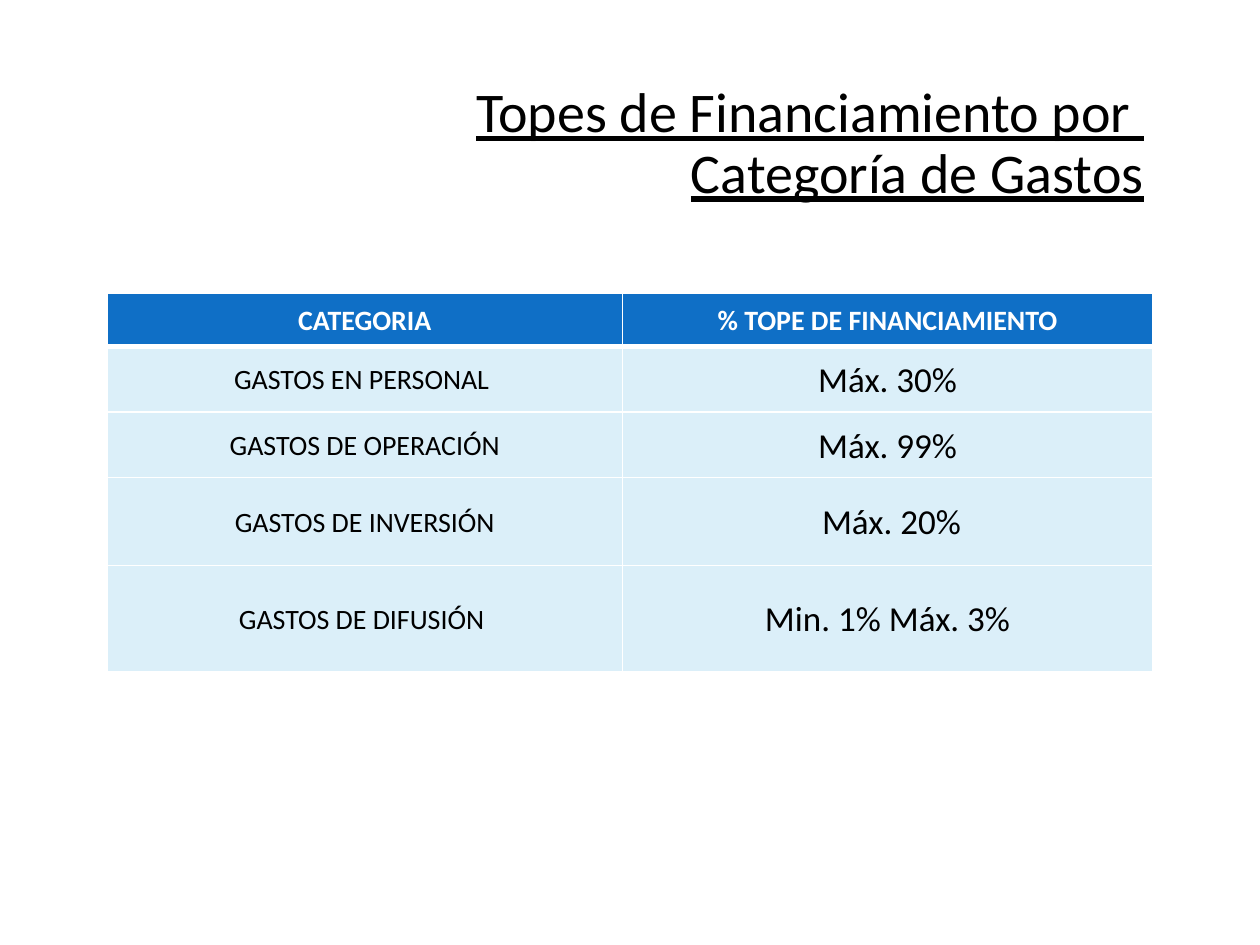
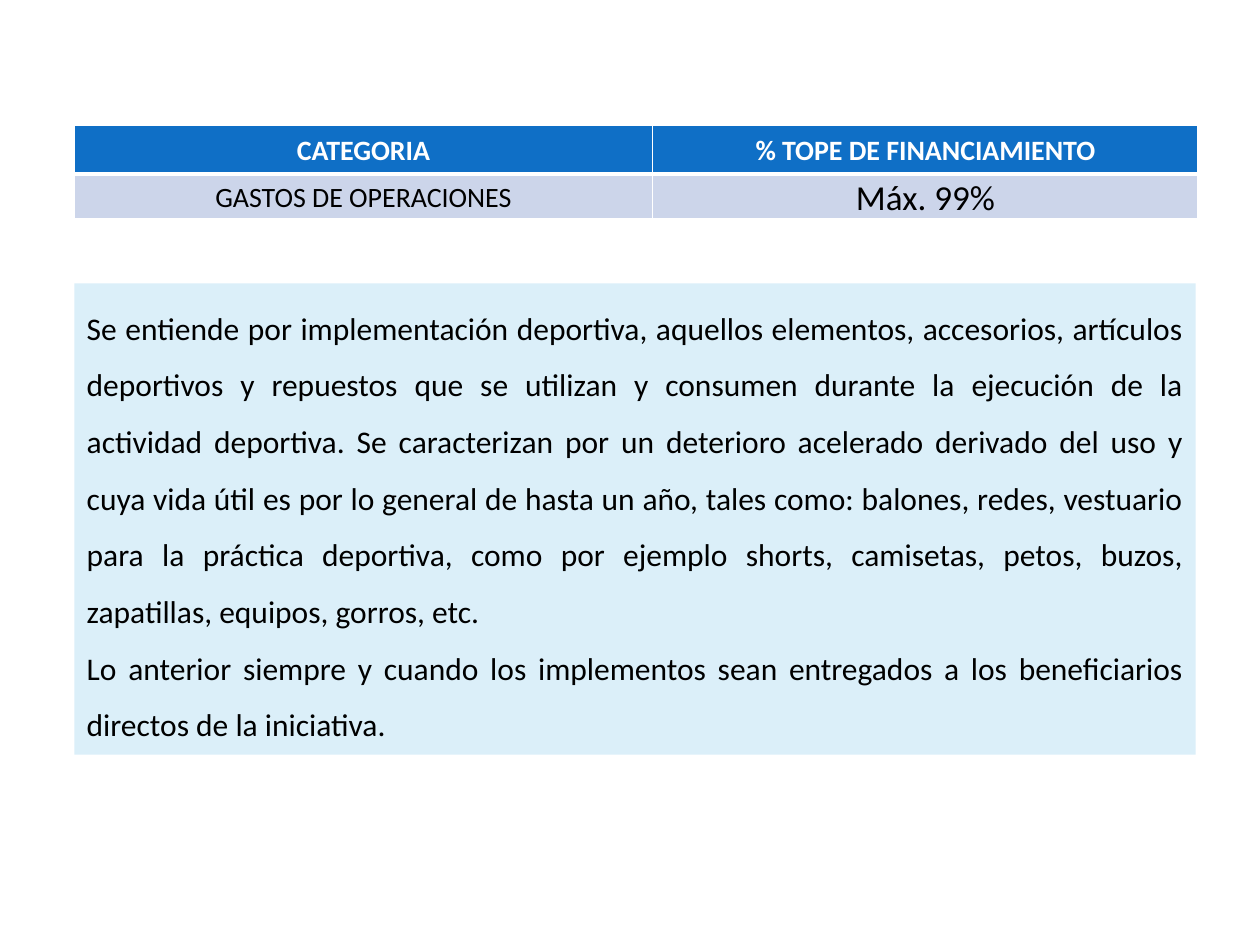
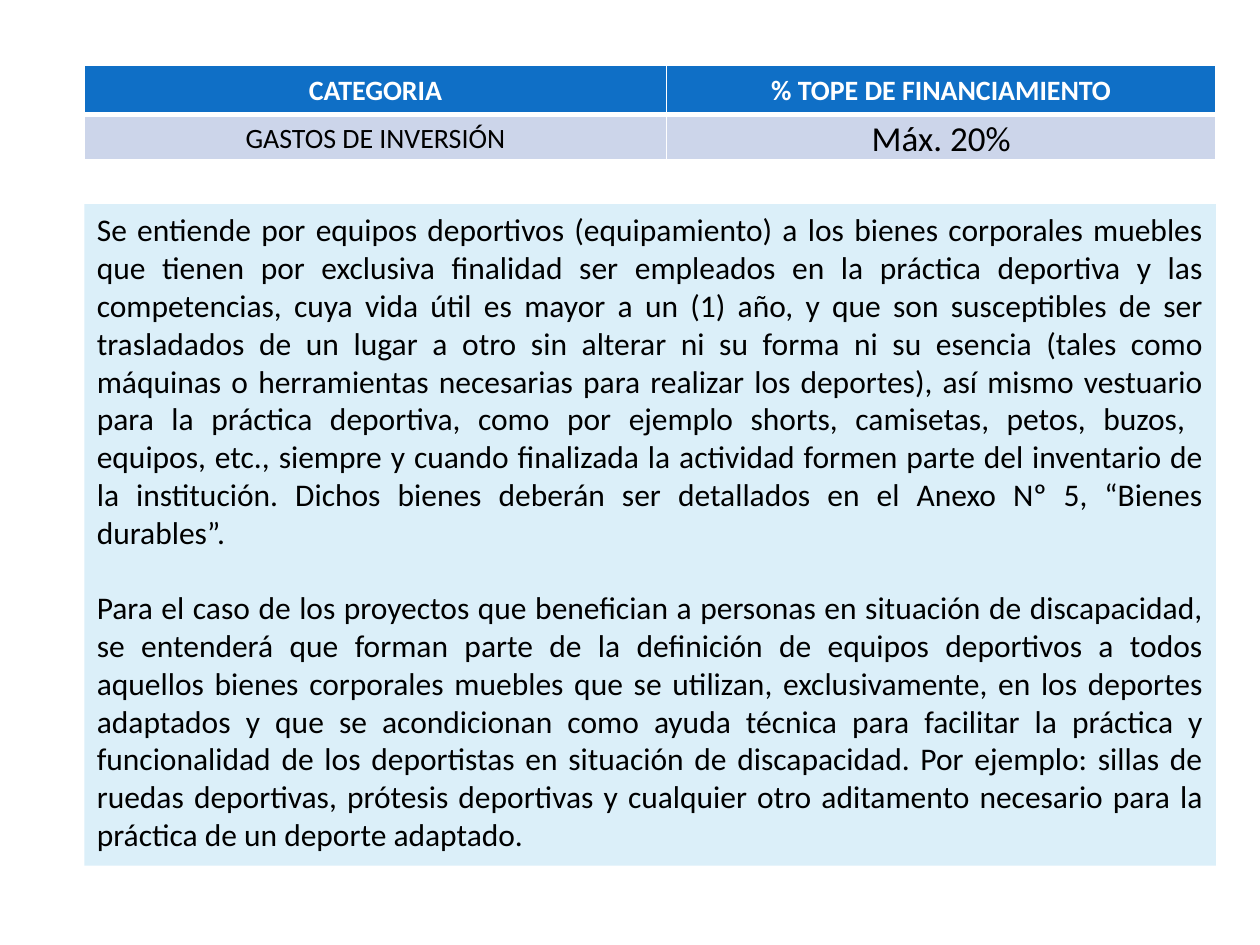
from lxml import etree
from pptx import Presentation
from pptx.dml.color import RGBColor
from pptx.enum import shapes, text
from pptx.oxml import ns
from pptx.util import Inches, Pt

# Style
WHITE = RGBColor(0xFF, 0xFF, 0xFF)
BLACK = RGBColor(0, 0, 0)
BLUE = RGBColor(0x0F, 0x6F, 0xC6)
PALE = RGBColor(0xDB, 0xEF, 0xF9)
LILAC = RGBColor(0xCC, 0xD5, 0xEA)
FONT = "Calibri"
TITLE_ONLY, BLANK = 5, 6
HEAD = ("CATEGORIA", "% TOPE DE FINANCIAMIENTO")
ALIGN, ANCHOR = text.PP_ALIGN, text.MSO_ANCHOR


def apply(item, values):
    for name, value in values.items():
        setattr(item, name, value)


class Deck:
    def __init__(self):
        self.prs = Presentation()
        self.prs.slide_width, self.prs.slide_height = Inches(10), Inches(7.5)
        self.slide = None

    def add(self, layout):
        self.slide = self.prs.slides.add_slide(self.prs.slide_layouts[layout])

    def label(self, para, words, size, color=BLACK, form=None, **font):
        apply(para, form or {})
        para.text = words
        for run in para.runs:
            apply(run.font, {"name": FONT, "size": Pt(size), **font})
            run.font.color.rgb = color

    def title(self, words, box):
        shape = self.slide.shapes.title
        apply(shape, dict(zip(("left", "top", "width", "height"), map(Inches, box))))
        apply(shape.text_frame, {"auto_size": text.MSO_AUTO_SIZE.NONE,
                                 "vertical_anchor": ANCHOR.MIDDLE})
        self.label(shape.text_frame.paragraphs[0], words, 32, underline=True,
                   form={"alignment": ALIGN.RIGHT, "line_spacing": 0.9})

    def edge(self, cell, side, width):
        props = cell._tc.get_or_add_tcPr()
        line = etree.SubElement(props, ns.qn(f"a:ln{side}"), w=str(Pt(width)))
        fill = etree.SubElement(line, ns.qn("a:solidFill"))
        etree.SubElement(fill, ns.qn("a:srgbClr"), val=str(WHITE))

    def cell(self, cell, words, size, color, fill, tops, bold):
        apply(cell, {"margin_left": Inches(0.02), "margin_right": Inches(0.02),
                     "margin_top": 0, "margin_bottom": 0,
                     "vertical_anchor": ANCHOR.MIDDLE})
        for side, width in zip("LRTB", (1, 1, *tops)):
            self.edge(cell, side, width)
        cell.fill.solid()
        cell.fill.fore_color.rgb = fill
        self.label(cell.text_frame.paragraphs[0], words, size, color, bold=bold,
                   form={"alignment": ALIGN.CENTER, "line_spacing": 1.07})

    def table(self, left, top, cols, highs, rows, fill):
        rows = [HEAD, *rows]
        grid = self.slide.shapes.add_table(
            len(rows), len(cols), Inches(left), Inches(top),
            Inches(sum(cols)), Inches(sum(highs))).table
        for col, width in zip(grid.columns, cols):
            col.width = Inches(width)
        for r, (row, high) in enumerate(zip(rows, highs)):
            grid.rows[r].height = Inches(high)
            for c, words in enumerate(row):
                if r == 0:
                    look = (16, WHITE, BLUE, (1, 3), True)
                else:
                    look = ((16, 20)[c], BLACK, fill, (3 if r == 1 else 1, 1), False)
                self.cell(grid.cell(r, c), words, *look)

    def panel(self, box, paras, spacing=1, gap=0):
        shape = self.slide.shapes.add_shape(
            shapes.MSO_SHAPE.RECTANGLE, *map(Inches, box))
        shape.shadow.inherit = False
        shape.fill.solid()
        shape.fill.fore_color.rgb = PALE
        shape.line.fill.background()
        frame = shape.text_frame
        apply(frame, {"word_wrap": True, "vertical_anchor": ANCHOR.TOP,
                      "auto_size": text.MSO_AUTO_SIZE.SHAPE_TO_FIT_TEXT})
        for i, words in enumerate(paras):
            para = frame.add_paragraph() if i else frame.paragraphs[0]
            self.label(para, words, 18, form={
                "alignment": ALIGN.JUSTIFY, "line_spacing": spacing,
                "space_before": Pt(gap if i else 0)})

    def topic(self, left, top, cols, row, box, paras, **form):
        self.add(BLANK)
        self.panel(box, paras, **form)
        self.table(left, top, cols, (0.39, 0.36), [row], LILAC)


def main():
    deck = Deck()

    # Funding caps
    deck.add(TITLE_ONLY)
    deck.title("Topes de Financiamiento por \vCategoría de Gastos",
               (0.83, 0.73, 8.35, 0.84))
    deck.table(0.85, 2.33, (4.09, 4.21), (0.42, 0.52, 0.52, 0.7, 0.84), [
        ("GASTOS EN PERSONAL ", "Máx. 30%"),
        ("GASTOS DE OPERACIÓN", "Máx. 99%"),
        ("GASTOS DE INVERSIÓN", " Máx. 20%"),
        ("GASTOS DE DIFUSIÓN ", "Min. 1% Máx. 3%"),
    ], PALE)

    # Operating costs
    deck.topic(0.59, 0.99, (4.59, 4.33), ("GASTOS DE OPERACIONES", "Máx. 99%"),
               (0.59, 2.25, 8.9, 3.74), [
        "Se entiende por implementación deportiva, aquellos elementos, accesorios, "
        "artículos deportivos y repuestos que se utilizan y consumen durante la "
        "ejecución de la actividad deportiva. Se caracterizan por un deterioro "
        "acelerado derivado del uso y cuya vida útil es por lo general de hasta un "
        "año, tales como: balones, redes, vestuario para la práctica deportiva, como "
        "por ejemplo shorts, camisetas, petos, buzos, zapatillas, equipos, gorros, "
        "etc. ",
        "Lo anterior siempre y cuando los implementos sean entregados a los "
        "beneficiarios directos de la iniciativa.",
    ], spacing=1.5)

    # Investment costs
    deck.topic(0.67, 0.52, (4.62, 4.36), ("GASTOS DE INVERSIÓN", "Máx. 20%"),
               (0.67, 1.62, 8.98, 5.25), [
        "Se entiende por equipos deportivos (equipamiento) a los bienes corporales "
        "muebles que tienen por exclusiva finalidad ser empleados en la práctica "
        "deportiva y las competencias, cuya vida útil es mayor a un (1) año, y que "
        "son susceptibles de ser trasladados de un lugar a otro sin alterar ni su "
        "forma ni su esencia (tales como máquinas o herramientas necesarias para "
        "realizar los deportes), así mismo vestuario para la práctica deportiva, "
        "como por ejemplo shorts, camisetas, petos, buzos,  equipos, etc., siempre y "
        "cuando finalizada la actividad formen parte del inventario de la "
        "institución. Dichos bienes deberán ser detallados en el Anexo Nº 5, "
        "“Bienes durables”.",
        "Para el caso de los proyectos que benefician a personas en situación de "
        "discapacidad, se entenderá que forman parte de la definición de equipos "
        "deportivos a todos aquellos bienes corporales muebles que se utilizan, "
        "exclusivamente, en los deportes adaptados y que se acondicionan como ayuda "
        "técnica para facilitar la práctica y funcionalidad de los deportistas en "
        "situación de discapacidad. Por ejemplo: sillas de ruedas deportivas, "
        "prótesis deportivas y cualquier otro aditamento necesario para la práctica "
        "de un deporte adaptado.",
    ], gap=21.5)

    deck.prs.save("out.pptx")


if __name__ == "__main__":
    main()
